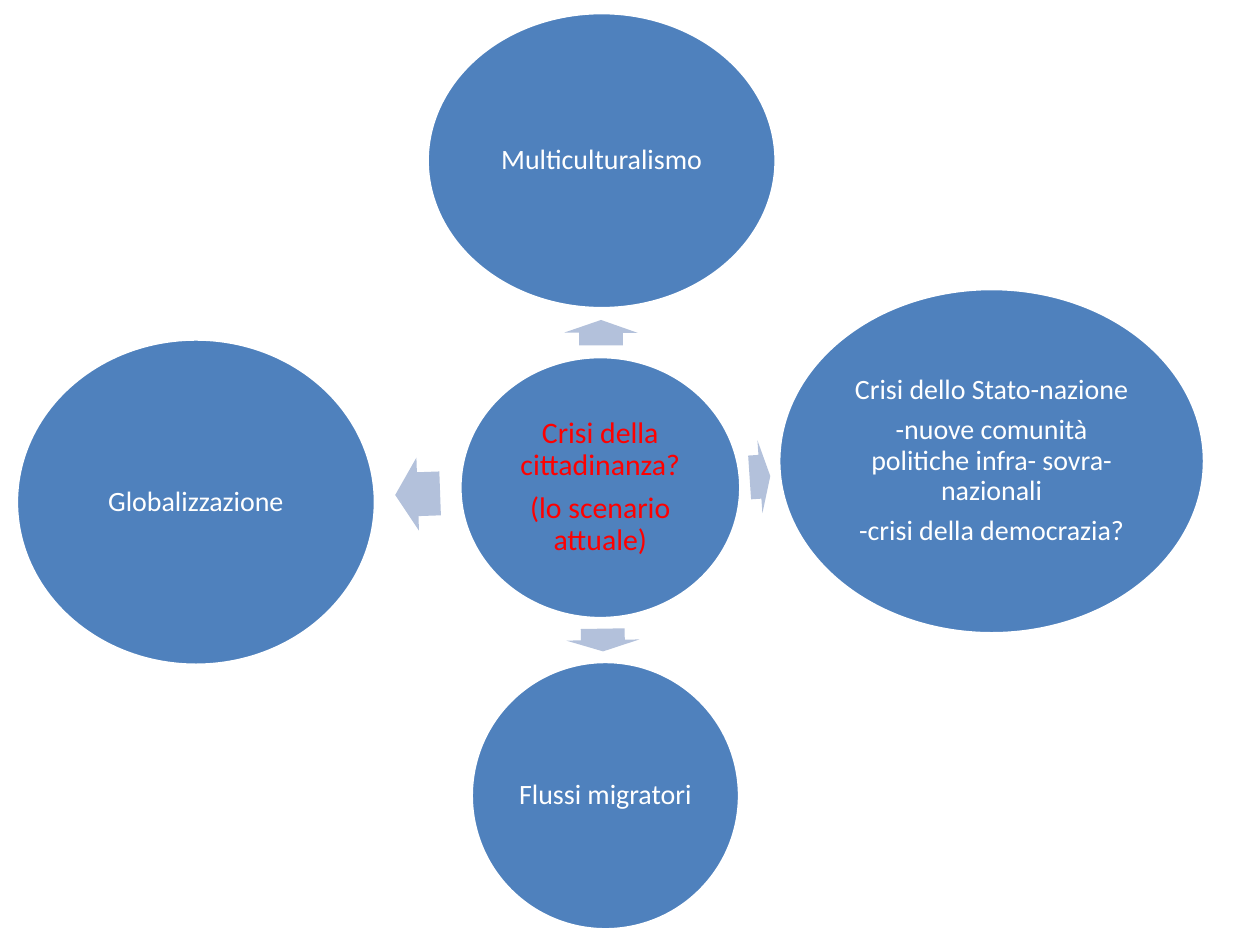
import math
from dataclasses import dataclass

import pptx
import pptx.util
import pptx.dml.color
import pptx.enum.shapes
import pptx.enum.text

Pt = pptx.util.Pt
Kind = pptx.enum.shapes.MSO_SHAPE


@dataclass(frozen=True)
class Theme:
    font: str = "Calibri"
    node: str = "4F81BD"
    arrow: str = "B3C1DB"
    edge: str = "FFFFFF"
    text: str = "FFFFFF"
    accent: str = "FF0000"
    size: int = 16
    hub_size: int = 17


@dataclass(frozen=True)
class Oval:
    """Centre and size in grid columns and rows."""
    x: float
    y: float
    w: float
    h: float

    def reach(self, angle):
        """Distance from the centre to the rim at an angle."""
        return 1 / math.hypot(2 * math.cos(angle) / self.w,
                              2 * math.sin(angle) / self.h)


def color(code):
    return pptx.dml.color.RGBColor.from_string(code)


def apply(target, values):
    for name, value in values.items():
        setattr(target, name, value)


class Board:
    COLS, ROWS = 100, 75
    ARROW_SHARE = 0.53
    ARROW_WIDTH = 5.8

    def __init__(self, deck, theme):
        self.theme = theme
        self.cell_w = deck.slide_width / self.COLS
        self.cell_h = deck.slide_height / self.ROWS
        self.slide = deck.slides.add_slide(deck.slide_layouts[6])

    def shape(self, kind, box, fill):
        item = self.slide.shapes.add_shape(
            kind,
            round((box.x - box.w / 2) * self.cell_w),
            round((box.y - box.h / 2) * self.cell_h),
            round(box.w * self.cell_w), round(box.h * self.cell_h))
        item.shadow.inherit = False
        item.fill.solid()
        item.fill.fore_color.rgb = color(fill)
        return item

    def node(self, oval, lines, size, ink):
        item = self.shape(Kind.OVAL, oval, self.theme.node)
        item.line.color.rgb = color(self.theme.edge)
        item.line.width = Pt(2)
        frame = item.text_frame
        frame.text = "\n".join(lines)
        inset = pptx.util.Inches(0.02)
        apply(frame, {
            "word_wrap": True,
            "vertical_anchor": pptx.enum.text.MSO_ANCHOR.MIDDLE,
            "margin_left": inset, "margin_right": inset,
            "margin_top": inset, "margin_bottom": inset})
        for para in frame.paragraphs:
            apply(para, {
                "alignment": pptx.enum.text.PP_ALIGN.CENTER,
                "line_spacing": 0.9, "space_after": Pt(size * 0.35)})
            for run in para.runs:
                apply(run.font, {"name": self.theme.font, "size": Pt(size)})
                run.font.color.rgb = color(ink)

    def arrow(self, start, end):
        """Point from one oval to another, centred in the gap between them."""
        dx, dy = end.x - start.x, end.y - start.y
        angle = math.atan2(dy, dx)
        near = start.reach(angle)
        far = math.hypot(dx, dy) - end.reach(angle)
        mid = (near + far) / 2
        box = Oval(start.x + mid * math.cos(angle),
                   start.y + mid * math.sin(angle),
                   (far - near) * self.ARROW_SHARE, self.ARROW_WIDTH)
        item = self.shape(Kind.RIGHT_ARROW, box, self.theme.arrow)
        item.line.fill.background()
        item.rotation = math.degrees(angle) % 360
        item.adjustments[0], item.adjustments[1] = 0.6, 0.5


HUB = Oval(47.65, 38.7, 22.3, 20.8)
HUB_TEXT = ["Crisi della cittadinanza?", "(lo scenario attuale)"]
THEMES = [
    (Oval(47.75, 12.75, 27.7, 23.5), ["Multiculturalismo"]),
    (Oval(78.7, 36.6, 33.8, 27.4), [
        "Crisi dello Stato-nazione",
        "-nuove comunità politiche infra- sovra-nazionali",
        "-crisi della democrazia?"]),
    (Oval(48.05, 63.15, 21.3, 21.3), ["Flussi migratori"]),
    (Oval(15.55, 39.85, 28.5, 25.9), ["Globalizzazione"]),
]


def main():
    deck = pptx.Presentation()
    deck.slide_width = pptx.util.Inches(10)
    deck.slide_height = pptx.util.Inches(7.5)
    theme = Theme()
    board = Board(deck, theme)
    board.node(HUB, HUB_TEXT, theme.hub_size, theme.accent)
    for oval, lines in THEMES:
        board.arrow(HUB, oval)
        board.node(oval, lines, theme.size, theme.text)
    deck.save("out.pptx")


if __name__ == "__main__":
    main()
